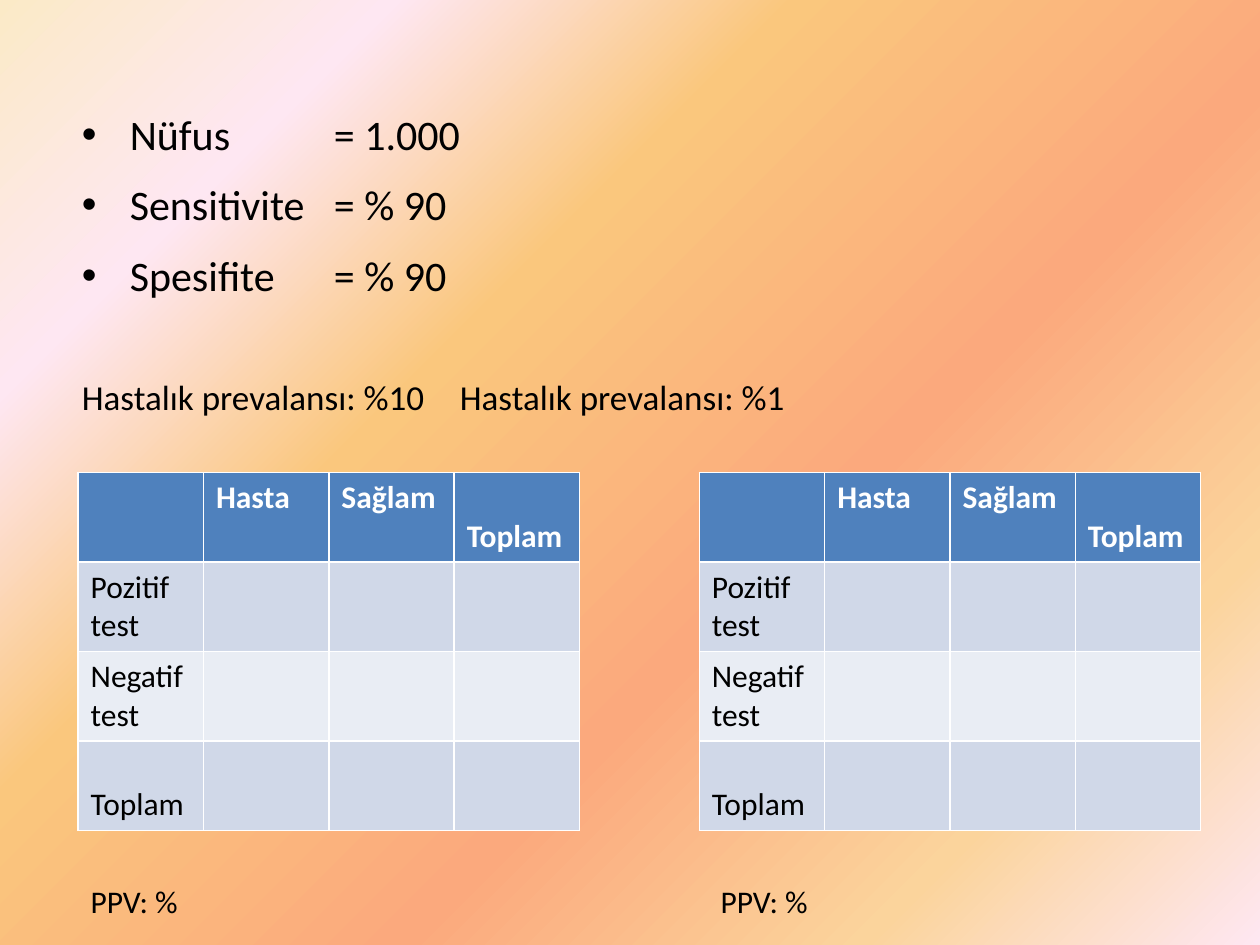
from dataclasses import dataclass

from lxml.etree import SubElement
from pptx import Presentation
from pptx.dml.color import RGBColor
from pptx.enum.text import MSO_ANCHOR as Anchor, MSO_AUTO_SIZE as AutoSize
from pptx.oxml.ns import qn
from pptx.util import Inches, Pt


@dataclass(frozen=True)
class Theme:
    font: str = "Calibri"
    ink: str = "000000"
    header_ink: str = "FFFFFF"
    header_fill: str = "4F81BD"
    bands: tuple = ("D0D8E8", "E9EDF4")
    gradient: tuple = ((0, "FBEAC7"), (18, "FEE7F2"), (36, "FAC77D"),
                       (61, "FBA97D"), (82, "FBD49C"), (100, "FEE7F2"))
    gradient_angle: int = 45
    fact_size: int = 24
    caption_size: int = 20
    table_size: int = 18


THEME = Theme()
FACTS = ("Nüfus\t= 1.000", "Sensitivite\t= % 90", "Spesifite\t= % 90")
CAPTIONS = "Hastalık prevalansı: %10\tHastalık prevalansı: %1"
COLUMN_HEADS = ("", "Hasta", "Sağlam", "Toplam")
ROW_HEADS = ("Pozitif test", "Negatif test", "Toplam")


def write(paragraph, text, size, color=THEME.ink, bold=False, before=0,
          tab=None, indent=None, bullet=None):
    """Write one formatted paragraph; tab and indent are lengths."""
    run = paragraph.add_run()
    run.text = text
    run.font.name = THEME.font
    run.font.size = Pt(size)
    run.font.bold = bold
    run.font.color.rgb = RGBColor.from_string(color)
    paragraph.space_before = Pt(before)
    properties = paragraph._p.get_or_add_pPr()
    if indent is not None:
        properties.set("marL", str(indent))
        properties.set("indent", str(-indent))
    if bullet:
        SubElement(properties, qn("a:buFont"), typeface="Arial")
        SubElement(properties, qn("a:buChar"), char=bullet)
    elif indent is not None:
        SubElement(properties, qn("a:buNone"))
    if tab is not None:
        stops = SubElement(properties, qn("a:tabLst"))
        SubElement(stops, qn("a:tab"), pos=str(tab), algn="l")


def paint_background(slide):
    fill = slide.background.fill
    fill.gradient()
    stops = slide.element.xpath(".//p:bg//a:gsLst")[0]
    for stop in list(stops):
        stops.remove(stop)
    for position, color in THEME.gradient:
        stop = SubElement(stops, qn("a:gs"), pos=str(position * 1000))
        SubElement(stop, qn("a:srgbClr"), val=color)
    # The public angle runs counter-clockwise
    fill.gradient_angle = 360 - THEME.gradient_angle


def add_facts(slide, left, top, width, height):
    """Assumptions, then the captions of both tables on one line."""
    body = slide.placeholders[1]
    body.left, body.top, body.width, body.height = left, top, width, height
    frame = body.text_frame
    frame.auto_size = AutoSize.NONE
    for number, fact in enumerate(FACTS):
        paragraph = frame.add_paragraph() if number else frame.paragraphs[0]
        write(paragraph, fact, THEME.fact_size, before=11.5 if number else 0,
              tab=Inches(2), indent=Inches(0.38), bullet="•")
    write(frame.add_paragraph(), CAPTIONS, THEME.caption_size, before=43,
          tab=Inches(5.6), indent=Inches(0))


def add_test_table(slide, left, top, width, height):
    """Empty two-by-two test table with totals."""
    rows = [COLUMN_HEADS] + [(head, "", "", "") for head in ROW_HEADS]
    table = slide.shapes.add_table(len(rows), len(COLUMN_HEADS),
                                   left, top, width, height).table
    for r, row in enumerate(rows):
        header = r == 0
        fill = THEME.header_fill if header else THEME.bands[(r - 1) % 2]
        for c, text in enumerate(row):
            cell = table.cell(r, c)
            cell.fill.solid()
            cell.fill.fore_color.rgb = RGBColor.from_string(fill)
            if text:
                write(cell.text_frame.paragraphs[0], text, THEME.table_size,
                      color=THEME.header_ink if header else THEME.ink,
                      bold=header)
            if text == "Toplam":
                cell.vertical_anchor = Anchor.BOTTOM


def add_predictive_values(slide, left, top, width, height):
    frame = slide.shapes.add_textbox(left, top, width, height).text_frame
    frame.word_wrap = True
    write(frame.paragraphs[0], "PPV: %\tPPV: %", THEME.table_size,
          tab=Inches(5))


def main():
    deck = Presentation()
    deck.slide_width, deck.slide_height = Inches(10), Inches(7.5)
    slide = deck.slides.add_slide(deck.slide_layouts[1])
    # The slide has no title
    title = slide.shapes.title.element
    title.getparent().remove(title)

    paint_background(slide)
    add_facts(slide, Inches(0.55), Inches(0.81), Inches(9), Inches(6.3))
    for left in (0.62, 5.55):
        add_test_table(slide, Inches(left), Inches(3.75),
                       Inches(3.98), Inches(2.84))
    add_predictive_values(slide, Inches(0.62), Inches(6.95),
                          Inches(8.91), Inches(0.4))
    deck.save("out.pptx")


if __name__ == "__main__":
    main()
